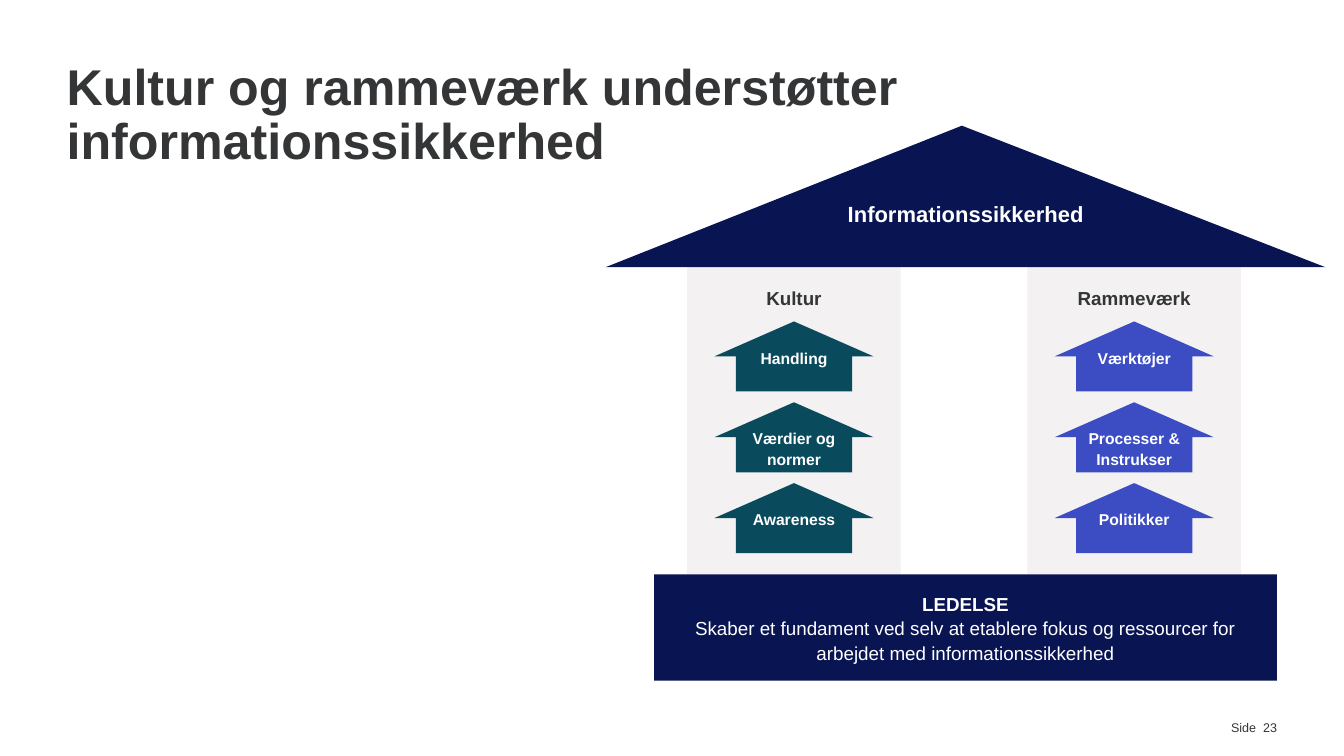
import dataclasses

import pptx
import pptx.dml.color
import pptx.enum.shapes
import pptx.enum.text
import pptx.presentation
import pptx.shapes.autoshape
import pptx.slide
import pptx.text.text
import pptx.util

Pt = pptx.util.Pt
RGB = pptx.dml.color.RGBColor
Kind = pptx.enum.shapes.MSO_SHAPE
Align = pptx.enum.text.PP_ALIGN
Anchor = pptx.enum.text.MSO_ANCHOR
Shape = pptx.shapes.autoshape.Shape
Slide = pptx.slide.Slide


@dataclasses.dataclass(frozen=True)
class Theme:
    font: str = "Arial"
    ink: RGB = RGB(0x34, 0x35, 0x36)
    label: RGB = RGB(0x33, 0x35, 0x37)
    white: RGB = RGB(0xFF, 0xFF, 0xFF)
    navy: RGB = RGB(0x09, 0x14, 0x53)
    teal: RGB = RGB(0x09, 0x4A, 0x5C)
    blue: RGB = RGB(0x3C, 0x4D, 0xC4)
    pale: RGB = RGB(0xF3, 0xF1, 0xF2)
    title: float = 32
    roof: float = 14
    body: float = 12
    arrow: float = 10
    foot: float = 8


@dataclasses.dataclass(frozen=True)
class Box:
    left: float
    top: float
    width: float
    height: float

    def pts(self) -> list[pptx.util.Length]:
        return [Pt(v) for v in dataclasses.astuple(self)]


@dataclasses.dataclass(frozen=True)
class Pillar:
    name: str
    color: RGB
    steps: tuple[str, ...]


THEME = Theme()
PILLARS = (
    Pillar("Kultur", THEME.teal, ("Handling", "Værdier og normer", "Awareness")),
    Pillar("Rammeværk", THEME.blue, ("Værktøjer", "Processer & Instrukser", "Politikker")),
)
FIRST = Box(438.1, 159.1, 136.1, 208.1)
PILLAR_GAP = 216.9
ARROW = Box(455.4, 204.8, 101.5, 44.6)
ARROW_GAP = 51.5


def style(para: pptx.text.text._Paragraph, size: float, color: RGB,
          bold: bool = True, align: Align = Align.CENTER, lines: float = 1) -> None:
    para.alignment = align
    para.line_spacing = lines
    para.space_before = para.space_after = Pt(0)
    for run in para.runs:
        run.font.name = THEME.font
        run.font.size = Pt(size)
        run.font.bold = bold
        run.font.color.rgb = color


def inset(frame: pptx.text.text.TextFrame, side: float = 0, edge: float = 0) -> None:
    """Wrap the text and set its margins: side left and right, edge top and bottom."""
    frame.word_wrap = True
    frame.margin_left = frame.margin_right = Pt(side)
    frame.margin_top = frame.margin_bottom = Pt(edge)


def block(slide: Slide, kind: Kind, box: Box, fill: RGB) -> Shape:
    """Add a flat preset shape without outline or shadow."""
    shape = slide.shapes.add_shape(kind, *box.pts())
    shape.shadow.inherit = False
    shape.fill.solid()
    shape.fill.fore_color.rgb = fill
    shape.line.fill.background()
    return shape


def label(slide: Slide, box: Box, text: str, size: float, color: RGB,
          bold: bool = True, align: Align = Align.CENTER) -> None:
    frame = slide.shapes.add_textbox(*box.pts()).text_frame
    inset(frame)
    frame.text = text
    style(frame.paragraphs[0], size, color, bold, align)


def title(slide: Slide) -> None:
    shape = slide.shapes.title
    shape.left, shape.top, shape.width, shape.height = Box(42.5, 39.6, 771.1, 62.6).pts()
    frame = shape.text_frame
    frame.text = "Kultur og rammeværk understøtter informationssikkerhed"
    frame.auto_size = pptx.enum.text.MSO_AUTO_SIZE.NONE
    frame.vertical_anchor = Anchor.TOP
    inset(frame)
    style(frame.paragraphs[0], THEME.title, THEME.ink, align=Align.LEFT, lines=0.9)


def arrow(slide: Slide, box: Box, text: str, fill: RGB) -> None:
    shape = block(slide, Kind.UP_ARROW, box, fill)
    shape.adjustments[0] = 0.73
    shape.adjustments[1] = 0.5
    frame = shape.text_frame
    frame.text = text
    frame.vertical_anchor = Anchor.TOP
    inset(frame, side=3.6)
    style(frame.paragraphs[0], THEME.arrow, THEME.white, lines=1.08)


def pillar(slide: Slide, item: Pillar, shift: float) -> None:
    """Draw one pillar with its heading and stacked arrows."""
    left = FIRST.left + shift
    block(slide, Kind.RECTANGLE, dataclasses.replace(FIRST, left=left), THEME.pale)
    label(slide, Box(left, 182.9, FIRST.width, 14.4), item.name, THEME.body, THEME.label)
    for row, text in enumerate(item.steps):
        box = dataclasses.replace(ARROW, left=ARROW.left + shift,
                                  top=ARROW.top + row * ARROW_GAP)
        arrow(slide, box, text, item.color)


def base(slide: Slide) -> None:
    shape = block(slide, Kind.RECTANGLE, Box(417, 366, 397, 67.7), THEME.navy)
    frame = shape.text_frame
    frame.text = ("LEDELSE\nSkaber et fundament ved selv at etablere fokus og "
                  "ressourcer for arbejdet med informationssikkerhed")
    frame.vertical_anchor = Anchor.MIDDLE
    inset(frame, side=7.2, edge=3.6)
    for para, bold in zip(frame.paragraphs, (True, False)):
        style(para, THEME.body, THEME.white, bold, lines=1.08)


def roof(slide: Slide) -> None:
    shape = block(slide, Kind.ISOSCELES_TRIANGLE, Box(386, 80.1, 459, 90.2), THEME.navy)
    shape.adjustments[0] = 0.495
    label(slide, Box(512.8, 127.7, 205.9, 17.3), "Informationssikkerhed",
          THEME.roof, THEME.white)


def main() -> None:
    deck = pptx.Presentation()
    deck.slide_width, deck.slide_height = Pt(856.8), Pt(481.7)
    slide = deck.slides.add_slide(deck.slide_layouts.get_by_name("Title Only"))
    title(slide)
    for index, item in enumerate(PILLARS):
        pillar(slide, item, index * PILLAR_GAP)
    base(slide)
    roof(slide)
    label(slide, Box(706.3, 458.9, 108, 10.1), "Side  23", THEME.foot, THEME.ink,
          bold=False, align=Align.RIGHT)
    deck.save("out.pptx")


if __name__ == "__main__":
    main()
